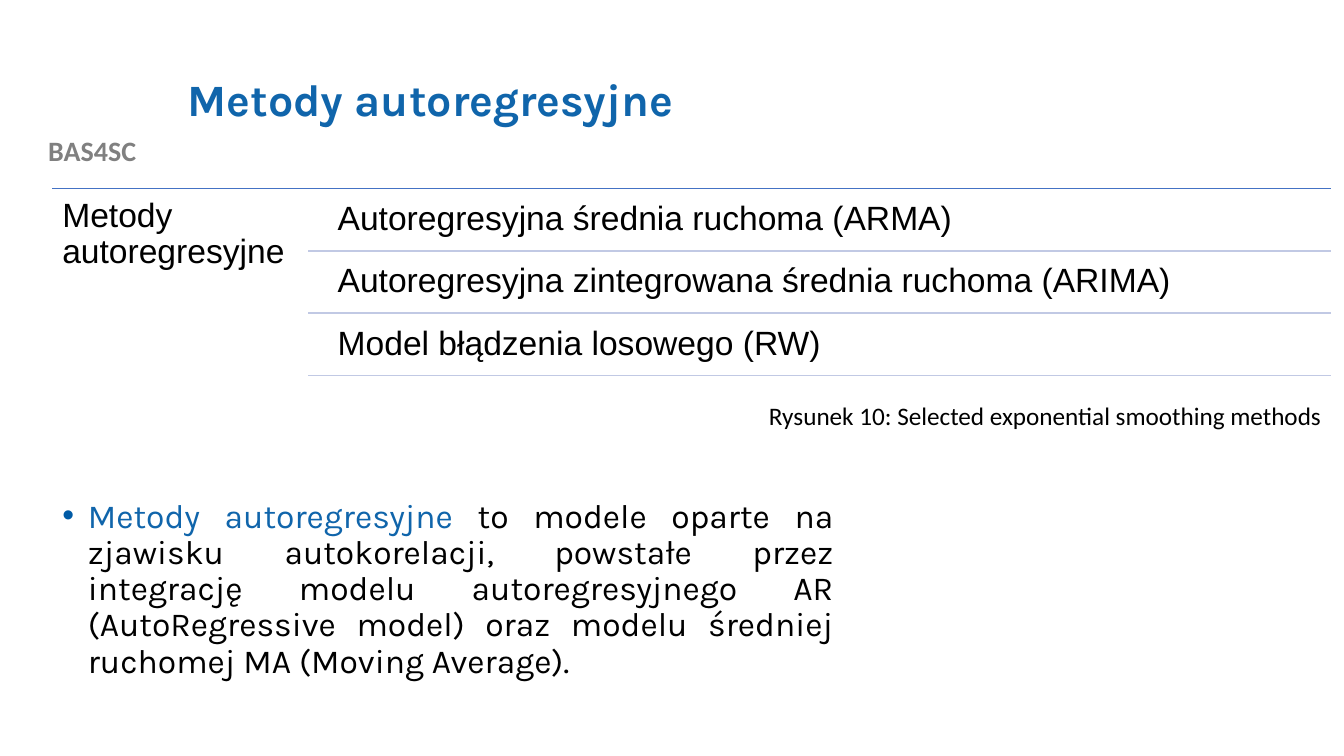
from lxml.etree import SubElement
from pptx import Presentation
from pptx.dml.color import RGBColor
from pptx.enum.shapes import MSO_CONNECTOR
from pptx.enum.text import MSO_ANCHOR, MSO_AUTO_SIZE, PP_ALIGN
from pptx.oxml.ns import qn
from pptx.util import Cm, Pt

BLUE, BLACK, GREY = "1065AB", "000000", "808080"
RULE, ROW_RULE, BULLET = "4472C4", "C1C9E4", "015BA6"

TITLE = "Metody autoregresyjne"
PROJECT = "BAS4SC"
GROUP = "Metody autoregresyjne"
METHODS = [
    "Autoregresyjna średnia ruchoma (ARMA)",
    "Autoregresyjna zintegrowana średnia ruchoma (ARIMA)",
    "Model błądzenia losowego (RW)",
]
CAPTION = "Rysunek 10: Selected exponential smoothing methods"
BODY = [
    ("Metody autoregresyjne ", BLUE),
    ("to modele oparte na zjawisku autokorelacji, powstałe przez integrację "
     "modelu autoregresyjnego AR (AutoRegressive model) oraz modelu średniej "
     "ruchomej MA (Moving Average).", BLACK),
]

LEFT, TOP, RIGHT = 1.32, 4.75, 33.53
ROW_LEFT, ROW_TEXT_LEFT, ROW_PITCH, ROW_GAP = 7.77, 8.26, 1.57, 0.08


def rgb(value):
    return RGBColor.from_string(value)


def style(font, name, size, color, bold=False):
    font.name, font.size, font.bold = name, Pt(size), bold
    font.color.rgb = rgb(color)


def place(sp, left, top, width, height):
    sp.left, sp.top, sp.width, sp.height = map(Cm, (left, top, width, height))


def add_text(s, text, box, name, size, color, bold=False, align=PP_ALIGN.LEFT,
             spacing=1.0, inset=None):
    sp = s.shapes.add_textbox(*map(Cm, box))
    tf = sp.text_frame
    tf.word_wrap = True
    if inset is not None:
        tf.margin_left = tf.margin_right = Cm(inset)
        tf.margin_top = tf.margin_bottom = Cm(inset)
    p = tf.paragraphs[0]
    p.text = text
    p.alignment, p.line_spacing = align, spacing
    style(p.runs[0].font, name, size, color, bold)


def add_rule(s, left, y, color):
    line = s.shapes.add_connector(
        MSO_CONNECTOR.STRAIGHT, Cm(left), Cm(y), Cm(RIGHT), Cm(y))
    line.line.color.rgb = rgb(color)
    line.line.width = Pt(1)
    SubElement(line._element.spPr, qn("a:effectLst"))


def add_title(s):
    sp = s.shapes.title
    place(sp, 4.47, 1.02, 27.08, 3.1)
    tf = sp.text_frame
    tf.text = TITLE
    tf.auto_size = MSO_AUTO_SIZE.NONE
    tf.vertical_anchor = MSO_ANCHOR.MIDDLE
    p = tf.paragraphs[0]
    p.alignment, p.line_spacing = PP_ALIGN.LEFT, 0.9
    style(p.runs[0].font, "Karla", 32, BLUE, True)


def add_body(s):
    sp = s.placeholders[1]
    place(sp, LEFT, 12.45, 19.94, 5.59)
    tf = sp.text_frame
    tf.auto_size = MSO_AUTO_SIZE.NONE
    p = tf.paragraphs[0]
    pPr = p._p.get_or_add_pPr()
    pPr.set("marL", str(Cm(0.64)))
    pPr.set("indent", str(-Cm(0.64)))
    SubElement(SubElement(pPr, qn("a:buClr")), qn("a:srgbClr"), val=BULLET)
    SubElement(pPr, qn("a:buFont"), typeface="Arial")
    SubElement(pPr, qn("a:buChar"), char="•")
    p.alignment, p.line_spacing, p.space_before = PP_ALIGN.JUSTIFY, 0.9, Pt(0)
    for text, color in BODY:
        r = p.add_run()
        r.text = text
        style(r.font, "Karla", 24, color)


def add_methods(s):
    add_rule(s, LEFT, TOP, RULE)
    add_text(s, GROUP, (LEFT, TOP, 6.45, 4.75), "Arial", 24, BLACK,
             spacing=0.9, inset=0.25)
    for i, method in enumerate(METHODS):
        y = TOP + i * ROW_PITCH
        box = (ROW_TEXT_LEFT, y + ROW_GAP, RIGHT - ROW_TEXT_LEFT, 1.5)
        add_text(s, method, box, "Arial", 24, BLACK, spacing=0.9, inset=0.25)
        add_rule(s, ROW_LEFT, y + ROW_PITCH, ROW_RULE)


def main():
    prs = Presentation()
    prs.slide_width, prs.slide_height = Cm(33.87), Cm(19.05)
    s = prs.slides.add_slide(prs.slide_layouts[1])
    add_text(s, PROJECT, (0, 3.25, 4.65, 1.12), "Calibri", 20, GREY, True,
             PP_ALIGN.CENTER)
    add_title(s)
    add_body(s)
    add_methods(s)
    add_text(s, CAPTION, (19.13, 9.96, 14.74, 1.02), "Calibri", 18, BLACK)
    prs.save("out.pptx")


if __name__ == "__main__":
    main()
